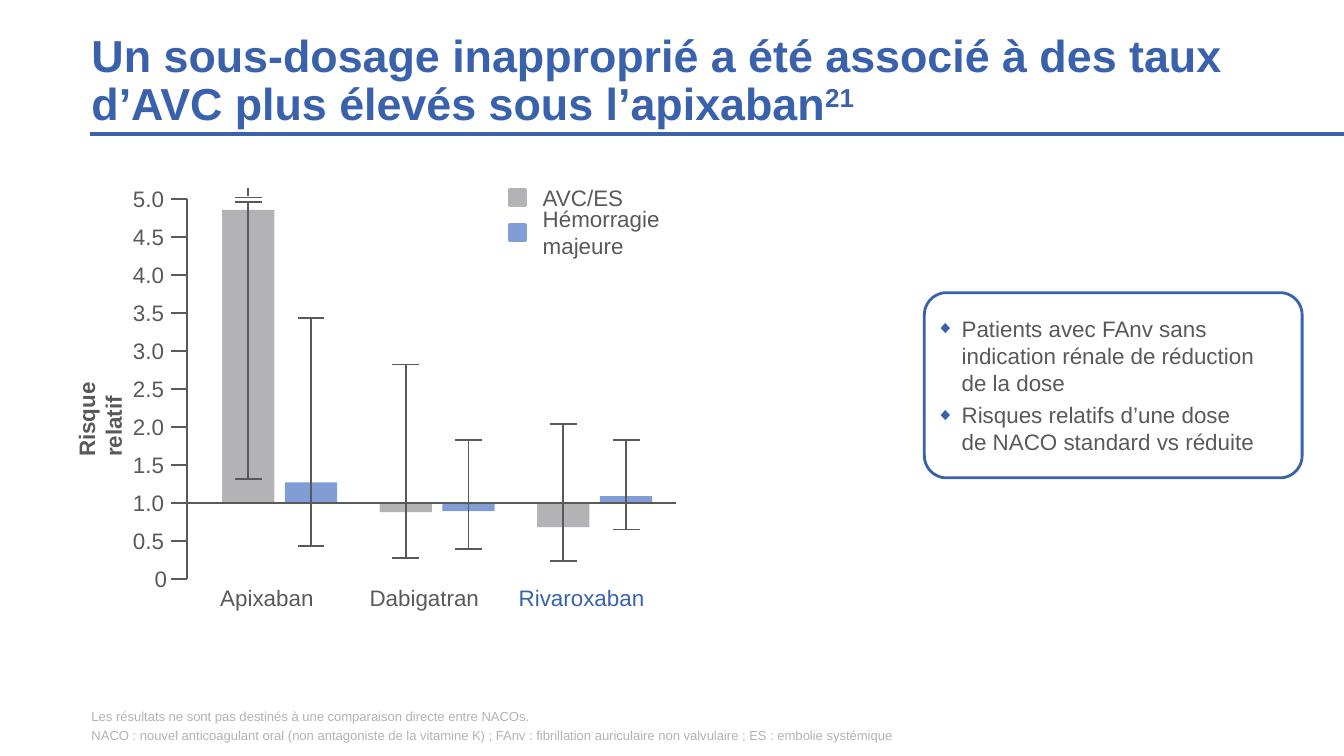
from lxml import etree
from pptx import Presentation
from pptx.dml.color import RGBColor
from pptx.enum.shapes import MSO_CONNECTOR, MSO_SHAPE
from pptx.enum.text import MSO_ANCHOR, MSO_AUTO_SIZE, PP_ALIGN
from pptx.oxml.ns import qn
from pptx.util import Pt

STRAIGHT = MSO_CONNECTOR.STRAIGHT
RECT, ROUND = MSO_SHAPE.RECTANGLE, MSO_SHAPE.ROUNDED_RECTANGLE
MIDDLE, BOTTOM = MSO_ANCHOR.MIDDLE, MSO_ANCHOR.BOTTOM
LEFT, FIXED = PP_ALIGN.LEFT, MSO_AUTO_SIZE.NONE
BLUE = RGBColor(0x39, 0x61, 0xAC)
PALE = RGBColor(0x80, 0x9E, 0xD5)
GREY = RGBColor(0xB3, 0xB2, 0xB5)
DARK = RGBColor(0x59, 0x59, 0x59)
WHITE = RGBColor(0xFF, 0xFF, 0xFF)


def write(shape, text, size=12, color=DARK, bold=False, anchor=MIDDLE, wrap=False,
          inset=(5, 3), before=0, after=0, space=1, hang=0, bullet=None):
    frame = shape.text_frame
    frame.auto_size = FIXED
    frame.word_wrap = wrap
    frame.vertical_anchor = anchor
    frame.margin_left = frame.margin_right = Pt(inset[0])
    frame.margin_top = frame.margin_bottom = Pt(inset[1])
    frame.text = text
    for para in frame.paragraphs:
        para.alignment = LEFT
        para.line_spacing = space
        para.space_before, para.space_after = Pt(before), Pt(after)
        for run in para.runs:
            font = run.font
            font.name, font.size, font.bold = "Arial", Pt(size), bold
            font.color.rgb = color
        props = para._p.get_or_add_pPr()
        if hang:
            props.set("marL", str(Pt(hang)))
            props.set("indent", str(-Pt(hang)))
        if bullet:
            tint = etree.SubElement(props, qn("a:buClr"))
            etree.SubElement(tint, qn("a:srgbClr"), val=str(BLUE))
            etree.SubElement(props, qn("a:buSzPct"), val="80000")
            etree.SubElement(props, qn("a:buFont"), typeface="Arial")
            etree.SubElement(props, qn("a:buChar"), char=bullet)
    return frame


def draw(x1, y1, x2, y2, color=DARK, width=1):
    line = slide.shapes.add_connector(STRAIGHT, Pt(x1), Pt(y1), Pt(x2), Pt(y2))
    line.line.color.rgb = color
    line.line.width = Pt(width)
    etree.SubElement(line._element.spPr, qn("a:effectLst"))


deck = Presentation()
deck.slide_width, deck.slide_height = Pt(720), Pt(405)
slide = deck.slides.add_slide(deck.slide_layouts[5])
shapes = slide.shapes

draw(48.2, 72, 720, 72, BLUE, 2.25)
title = shapes.title
title.left, title.top, title.width, title.height = Pt(49), Pt(17.3), Pt(651.6), Pt(52.5)
frame = write(title, "Un sous-dosage inapproprié a été associé à des taux d’AVC plus élevés sous l’apixaban",
              size=24, color=BLUE, bold=True, anchor=BOTTOM, wrap=True, inset=(0, 0), space=0.9)
note = frame.paragraphs[0].add_run()
note.text = "21"
note.font.name, note.font.size, note.font.bold = "Arial", Pt(24), True
note.font.color.rgb = BLUE
note.font._element.set("baseline", "30000")

foot = shapes.add_textbox(Pt(49), Pt(379.5), Pt(651.6), Pt(18.7))
write(foot, "Les résultats ne sont pas destinés à une comparaison directe entre NACOs.\n"
      "NACO : nouvel anticoagulant oral (non antagoniste de la vitamine K) ; "
      "FAnv : fibrillation auriculaire non valvulaire ; ES : embolie systémique",
      size=7, color=GREY, anchor=BOTTOM, wrap=True, inset=(0, 0), after=2, hang=7.2)

card = shapes.add_shape(ROUND, Pt(495.2), Pt(156.8), Pt(202.4), Pt(99.2))
card.adjustments[0] = 0.12
card.shadow.inherit = False
card.fill.solid()
card.fill.fore_color.rgb = WHITE
card.line.color.rgb = BLUE
card.line.width = Pt(1.5)
write(card, "Patients avec FAnv sans indication rénale de réduction \vde la dose\n"
      "Risques relatifs d’une dose \vde NACO standard vs réduite",
      wrap=True, inset=(3, 0), before=3, hang=13.5, bullet="◆")

AXIS, ZERO, UNIT, BAR, CAP = 100.2, 310.2, 40.76, 28, 7.2
BASE = ZERO - UNIT
draw(AXIS, ZERO - 5 * UNIT, AXIS, ZERO)
for step in range(11):
    y = ZERO - step * UNIT / 2
    draw(91.6, y, AXIS, y)
    x, wide = (66.2, 27.4) if step else (77.8, 17.3)
    label = shapes.add_textbox(Pt(x), Pt(y - 10), Pt(wide), Pt(20))
    write(label, f"{step / 2:.1f}" if step else "0")

name = shapes.add_textbox(Pt(13), Pt(199.4), Pt(80.6), Pt(20.2))
name.rotation = 270
write(name, "Risque relatif", bold=True, wrap=True)

DRUGS = [
    ("Apixaban", 113, 61.2, DARK, [(4.85, 1.32, 4.96), (1.27, 0.43, 3.43)]),
    ("Dabigatran", 193, 69.8, DARK, [(0.88, 0.28, 2.82), (0.89, 0.39, 1.83)]),
    ("Rivaroxaban", 272.9, 78.5, BLUE, [(0.68, 0.24, 2.04), (1.09, 0.65, 1.83)]),
]
for group, (drug, left, wide, color, risks) in enumerate(DRUGS):
    for pair, (risk, low, high) in enumerate(risks):
        mid = 133 + 84.4 * group + 33.6 * pair
        y = ZERO - risk * UNIT
        bar = shapes.add_shape(RECT, Pt(mid - BAR / 2), Pt(min(y, BASE)), Pt(BAR), Pt(abs(BASE - y)))
        bar.shadow.inherit = False
        bar.fill.solid()
        bar.fill.fore_color.rgb = PALE if pair else GREY
        bar.line.fill.background()
        floor, roof = ZERO - low * UNIT, ZERO - high * UNIT
        draw(mid, roof, mid, floor)
        for end in (roof, floor):
            draw(mid - CAP, end, mid + CAP, end)
    label = shapes.add_textbox(Pt(left), Pt(309.8), Pt(wide), Pt(20.2))
    write(label, drug, color=color)
draw(AXIS, BASE, 362.2, BASE)
draw(133 - CAP, 105.8, 133 + CAP, 105.8)
draw(133, 105.1, 133, 100.8)

for row, (text, color, wide) in enumerate([("AVC/ES", GREY, 69), ("Hémorragie majeure", PALE, 93.6)]):
    y = 105.8 + 18.7 * row
    key = shapes.add_shape(RECT, Pt(272.9), Pt(y - 4.3), Pt(8.6), Pt(8.6))
    key.shadow.inherit = False
    key.fill.solid()
    key.fill.fore_color.rgb = color
    key.line.color.rgb = color
    key.line.width = Pt(1.5)
    label = shapes.add_textbox(Pt(283.7), Pt(y - 11), Pt(wide), Pt(22))
    write(label, text, wrap=True, inset=(7.2, 3.6))

deck.save("out.pptx")
